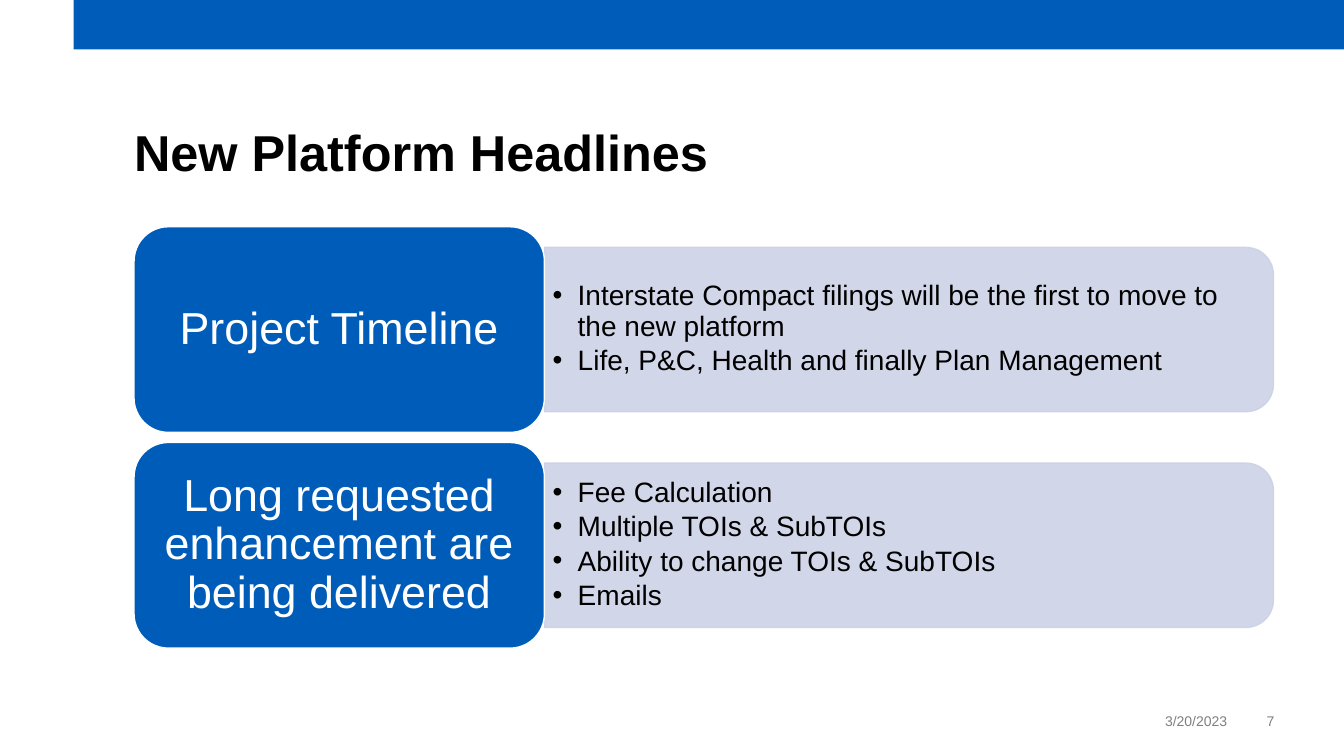
from dataclasses import dataclass

from lxml.etree import SubElement
from pptx import Presentation
from pptx.dml.color import RGBColor
from pptx.dml.fill import FillFormat
from pptx.enum.shapes import MSO_SHAPE
from pptx.enum.text import MSO_ANCHOR, PP_ALIGN
from pptx.oxml.ns import qn
from pptx.shapes.autoshape import Shape
from pptx.slide import Slide
from pptx.text.text import TextFrame
from pptx.util import Inches, Pt

BLUE, PALE, WHITE, BLACK, GRAY = "005CB9", "CCD2E6", "FFFFFF", "000000", "808080"
LEFT, LABEL_WIDTH, LABEL_HEIGHT = 1.33, 4.07, 2.04
PANEL_WIDTH, PANEL_HEIGHT = 7.23, 1.63
FIRST_TOP, ROW_PITCH = 2.25, 2.14


@dataclass
class Headline:
    label: str
    points: list[str]


@dataclass
class TextStyle:
    size: float
    color: str
    bold: bool = False
    align: PP_ALIGN = PP_ALIGN.LEFT
    anchor: MSO_ANCHOR = MSO_ANCHOR.BOTTOM
    line_spacing: float = 1.0
    space_after: float = 0
    margin_x: float = 0
    margin_y: float = 0
    bullet: bool = False


@dataclass
class Caption:
    text: str
    left: float
    top: float
    width: float
    height: float
    style: TextStyle


TITLE = TextStyle(36, BLACK, bold=True, line_spacing=0.9)
FOOTER = TextStyle(10, GRAY, align=PP_ALIGN.RIGHT, space_after=6)
LABEL = TextStyle(32, WHITE, align=PP_ALIGN.CENTER, anchor=MSO_ANCHOR.MIDDLE,
                  line_spacing=0.9, margin_x=0.13, margin_y=0.07)
POINTS = TextStyle(20, BLACK, anchor=MSO_ANCHOR.MIDDLE, line_spacing=0.9,
                   space_after=3, margin_x=0.08, margin_y=0.04, bullet=True)

CAPTIONS = [
    Caption("New Platform Headlines", LEFT, 1.22, 11.3, 0.59, TITLE),
    Caption("3/20/2023", 11.47, 7.04, 0.7, 0.2, FOOTER),
    Caption("7", 12.27, 7.04, 0.37, 0.2, FOOTER),
]
HEADLINES = [
    Headline("Project Timeline", [
        "Interstate Compact filings will be the first to move to the new platform",
        "Life, P&C, Health and finally Plan Management",
    ]),
    Headline("Long requested enhancement are being delivered", [
        "Fee Calculation",
        "Multiple TOIs & SubTOIs",
        "Ability to change TOIs & SubTOIs",
        "Emails",
    ]),
]


def paint(fill: FillFormat, color: str) -> None:
    fill.solid()
    fill.fore_color.rgb = RGBColor.from_string(color)


def write(frame: TextFrame, texts: list[str], style: TextStyle) -> None:
    frame.word_wrap = True
    frame.vertical_anchor = style.anchor
    frame.margin_left = frame.margin_right = Inches(style.margin_x)
    frame.margin_top = frame.margin_bottom = Inches(style.margin_y)
    for index, text in enumerate(texts):
        paragraph = frame.add_paragraph() if index else frame.paragraphs[0]
        paragraph.alignment = style.align
        paragraph.line_spacing = style.line_spacing
        paragraph.space_after = Pt(style.space_after)
        if style.bullet:
            properties = paragraph._p.get_or_add_pPr()
            properties.set("marL", str(Inches(0.25)))
            properties.set("indent", str(Inches(-0.25)))
            SubElement(properties, qn("a:buFont"), typeface="Arial")
            SubElement(properties, qn("a:buChar"), char="•")
        run = paragraph.add_run()
        run.text = text
        run.font.name = "Arial"
        run.font.size = Pt(style.size)
        run.font.bold = style.bold
        run.font.color.rgb = RGBColor.from_string(style.color)


def add_block(slide: Slide, kind: MSO_SHAPE, left: float, top: float, width: float,
              height: float, fill: str, line: str | None = None) -> Shape:
    shape = slide.shapes.add_shape(
        kind, Inches(left), Inches(top), Inches(width), Inches(height))
    shape.shadow.inherit = False
    paint(shape.fill, fill)
    if line:
        paint(shape.line.fill, line)
        shape.line.width = Pt(1)
    else:
        shape.line.fill.background()
    return shape


def add_text(slide: Slide, left: float, top: float, width: float, height: float,
             texts: list[str], style: TextStyle) -> None:
    box = slide.shapes.add_textbox(
        Inches(left), Inches(top), Inches(width), Inches(height))
    write(box.text_frame, texts, style)


def add_headline(slide: Slide, headline: Headline, top: float) -> None:
    panel_left = LEFT + LABEL_WIDTH
    middle = top + LABEL_HEIGHT / 2

    # Pale panel: an upright shape turned so its round corners face right
    panel = add_block(slide, MSO_SHAPE.ROUND_2_SAME_RECTANGLE,
                      panel_left + (PANEL_WIDTH - PANEL_HEIGHT) / 2,
                      middle - PANEL_WIDTH / 2,
                      PANEL_HEIGHT, PANEL_WIDTH, PALE, PALE)
    panel.rotation = 90
    for color in panel._element.spPr.iter(qn("a:srgbClr")):
        SubElement(color, qn("a:alpha"), val="90000")

    # Bullet points
    add_text(slide, panel_left, middle - 0.74, PANEL_WIDTH - 0.08, 1.47,
             headline.points, POINTS)

    # Blue label
    label = add_block(slide, MSO_SHAPE.ROUNDED_RECTANGLE, LEFT, top,
                      LABEL_WIDTH, LABEL_HEIGHT, BLUE, WHITE)
    write(label.text_frame, [headline.label], LABEL)


def main() -> None:
    presentation = Presentation()
    presentation.slide_width = Inches(13.33)
    presentation.slide_height = Inches(7.5)
    slide = presentation.slides.add_slide(presentation.slide_layouts[6])

    # Top band
    add_block(slide, MSO_SHAPE.RECTANGLE, 0.73, 0, 12.6, 0.49, BLUE)

    # Title and footer
    for caption in CAPTIONS:
        add_text(slide, caption.left, caption.top, caption.width, caption.height,
                 [caption.text], caption.style)

    # Headline rows
    for row, headline in enumerate(HEADLINES):
        add_headline(slide, headline, FIRST_TOP + row * ROW_PITCH)

    presentation.save("out.pptx")


if __name__ == "__main__":
    main()
